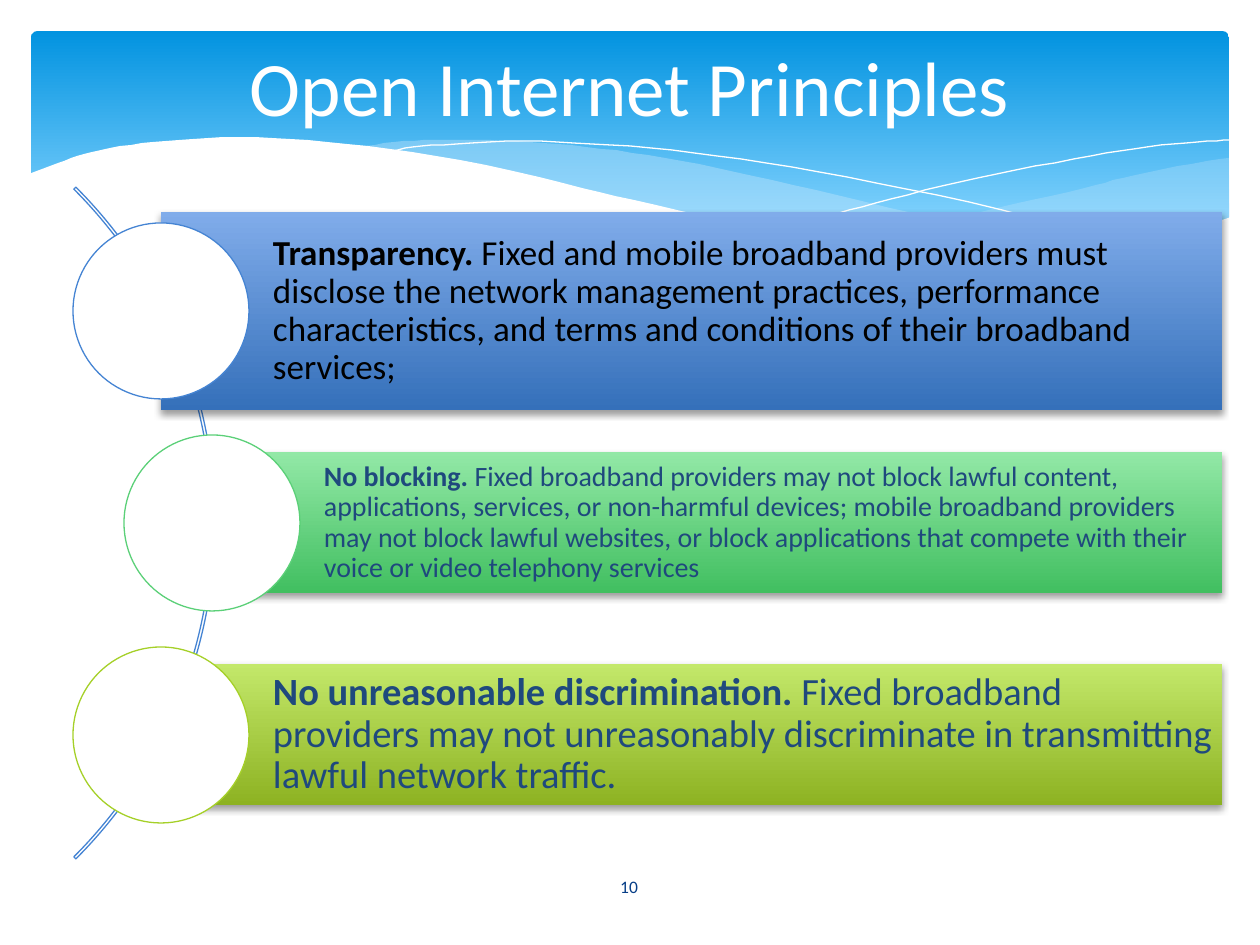
from lxml.etree import SubElement
from pptx import Presentation
from pptx.dml.color import RGBColor
from pptx.enum.shapes import MSO_SHAPE as Kind
from pptx.enum.text import MSO_ANCHOR as Anchor, PP_ALIGN as Align
from pptx.oxml.ns import qn
from pptx.util import Pt

SCALE = 914400 / 126
WIDE, HIGH = 1260, 945
FONT = "Calibri"
HEX = {
    "white": "FFFFFF", "black": "000000", "navy": "1F497D", "page": "073E87",
    "sky": "0293E0", "pale": "83D3FE", "mist": "C6E7FC",
    "blue": "4584D3", "blue top": "80ACEA", "blue end": "3570BA",
    "green": "5BD078", "green top": "92E8A6", "green end": "41BF60",
    "lime": "A5D028", "lime top": "C3E86A", "lime end": "8DB222",
}

# Title and page number: words, place, size, colour
LABELS = [
    ("Open Internet Principles", (63, 31, 1134, 109), 44, "white"),
    ("10", (549, 862, 160, 50), 10, "page"),
]

# Heading, words, hue, bar left, bar height, text size, text colour, inset
RULES = [
    ("Transparency. ",
     "Fixed and mobile broadband providers must disclose the network "
     "management practices, performance characteristics, and terms and "
     "conditions of their broadband services;",
     "blue", 161, 198, 20, "black", 8),
    ("No blocking. ",
     "Fixed broadband providers may not block lawful content, applications, "
     "services, or non-harmful devices; mobile broadband providers may not "
     "block lawful websites, or block applications that compete with their "
     "voice or video telephony services",
     "green", 212, 141, 16, "navy", 5),
    ("No unreasonable discrimination. ",
     "Fixed broadband providers may not unreasonably discriminate in "
     "transmitting lawful network traffic.",
     "lime", 161, 141, 22, "navy", 8),
]
MIDDLE, STEP, RIGHT, DISC, INDENT = 523, 212, 1222, 176, 112
RADIUS, HUB = 475, -260

# Each wave is a chain of smooth runs that meet at corners.
# Fill, opacity in percent, runs of knots; no fill means a white hairline
WAVES = [
    ("mist", 29, [
        [(1229, 158), (1178, 166), (1123, 178), (1085, 188), (1014, 204),
         (949, 219), (890, 231), (833, 241)],
        [(833, 241), (888, 247), (939, 252), (998, 256), (1052, 256),
         (1099, 252), (1140, 244), (1178, 236), (1230, 217)]]),
    ("mist", 40, [
        [(1125, 249), (1055, 239), (977, 227), (890, 208), (793, 185),
         (717, 168), (648, 155), (586, 147), (529, 142), (479, 140),
         (433, 140), (394, 142), (360, 147)],
        [(360, 147), (431, 158), (509, 173), (566, 185), (668, 209),
         (757, 228), (838, 242), (910, 251), (974, 256), (1031, 257),
         (1080, 255), (1125, 249)]]),
    (None, 100, [
        [(389, 152), (413, 147), (457, 144), (524, 141), (591, 144),
         (672, 150), (766, 163), (876, 183), (1002, 210), (1143, 248)]]),
    (None, 100, [
        [(772, 229), (823, 217), (876, 203), (942, 186), (1016, 170),
         (1091, 156), (1147, 147), (1198, 142), (1229, 140)]]),
    ("white", 100, [
        [(1231, 217), (1197, 229), (1159, 239), (1118, 248), (1071, 253),
         (1019, 255), (959, 253), (892, 247), (816, 236), (730, 221),
         (634, 200), (563, 183), (460, 160), (368, 146), (290, 139),
         (223, 137), (166, 141), (120, 146), (84, 154), (58, 163),
         (29, 174)],
        [(29, 321), (1231, 321)]]),
]


def emu(px):
    return round(px * SCALE)


def rgb(name):
    return RGBColor.from_string(HEX[name])


def smooth(knots, parts=4):
    """Points of a Catmull-Rom curve through the knots."""
    ends = [knots[0], *knots, knots[-1]]
    points = [knots[0]]
    for a, b, c, d in zip(ends, ends[1:], ends[2:], ends[3:]):
        for n in range(1, parts + 1):
            t = n / parts
            points.append(tuple(
                (2 * q + (r - p) * t + (2 * p - 5 * q + 4 * r - s) * t ** 2
                 + (3 * q - p - 3 * r + s) * t ** 3) / 2
                for p, q, r, s in zip(a, b, c, d)))
    return points


def paint(shape, fill=None, line=None, width=0.75):
    shape.shadow.inherit = False
    if fill:
        shape.fill.solid()
        shape.fill.fore_color.rgb = rgb(fill)
    else:
        shape.fill.background()
    if line:
        shape.line.color.rgb = rgb(line)
        shape.line.width = Pt(width)
    else:
        shape.line.fill.background()


def blend(shape, top, end, stop=1):
    """Fill from top to bottom, reaching the end colour at stop."""
    shape.fill.gradient()
    shape.fill.gradient_angle = 270
    for mark, name, place in zip(shape.fill.gradient_stops, (top, end), (0, stop)):
        mark.color.rgb = rgb(name)
        mark.position = place


def fade(shape, percent):
    color = shape.fill._xPr.find(qn("a:solidFill"))[0]
    SubElement(color, qn("a:alpha"), val=str(percent * 1000))


def shade(shape):
    """Soft shadow below the shape."""
    effects = shape._element.spPr.find(qn("a:effectLst"))
    drop = SubElement(effects, qn("a:outerShdw"), blurRad=str(Pt(4)),
                      dist=str(Pt(2)), dir="5400000", rotWithShape="0")
    color = SubElement(drop, qn("a:srgbClr"), val=HEX["black"])
    SubElement(color, qn("a:alpha"), val="38000")


def write(shape, runs, size, color, align):
    frame = shape.text_frame
    frame.word_wrap = True
    frame.vertical_anchor = Anchor.MIDDLE
    para = frame.paragraphs[0]
    para.alignment = align
    for words, bold in runs:
        run = para.add_run()
        run.text = words
        look = {"name": FONT, "size": Pt(size), "bold": bold}
        for key, value in look.items():
            setattr(run.font, key, value)
        run.font.color.rgb = rgb(color)
    return frame, para


def main():
    deck = Presentation()
    deck.slide_width, deck.slide_height = emu(WIDE), emu(HIGH)
    shapes = deck.slides.add_slide(deck.slide_layouts[6]).shapes

    def add(kind, *box):
        return shapes.add_shape(kind, *map(emu, box))

    banner = add(Kind.ROUNDED_RECTANGLE, 31, 31, 1198, 217)
    banner.adjustments[0] = 0.03
    paint(banner)
    blend(banner, "sky", "pale", 0.9)

    for fill, percent, runs in WAVES:
        points = [p for knots in runs for p in smooth(knots)]
        pen = shapes.build_freeform(*points[0], scale=SCALE)
        pen.add_line_segments(points[1:], close=bool(fill))
        wave = pen.convert_to_shape()
        paint(wave, fill, None if fill else "white", 0)
        if percent < 100:
            fade(wave, percent)

    for words, box, size, color in LABELS:
        label = shapes.add_textbox(*map(emu, box))
        write(label, [(words, False)], size, color, Align.CENTER)

    arc = add(Kind.BLOCK_ARC, HUB - RADIUS, MIDDLE - RADIUS, 2 * RADIUS, 2 * RADIUS)
    for n, value in enumerate((189, 27, 0.003)):
        arc.adjustments[n] = value
    paint(arc, line="blue")

    for row, (head, words, hue, left, tall, size, color, inset) in enumerate(RULES):
        mid = MIDDLE + (row - 1) * STEP
        bar = add(Kind.RECTANGLE, left, mid - tall / 2, RIGHT - left, tall)
        paint(bar)
        blend(bar, hue + " top", hue + " end")
        shade(bar)
        frame, para = write(bar, [(head, True), (words, False)], size, color, Align.LEFT)
        para.line_spacing = 0.9
        for side in ("left", "top", "right", "bottom"):
            setattr(frame, "margin_" + side, emu(INDENT if side == "left" else inset))
        disc = add(Kind.OVAL, left - DISC / 2, mid - DISC / 2, DISC, DISC)
        paint(disc, "white", hue)

    deck.save("out.pptx")


if __name__ == "__main__":
    main()
